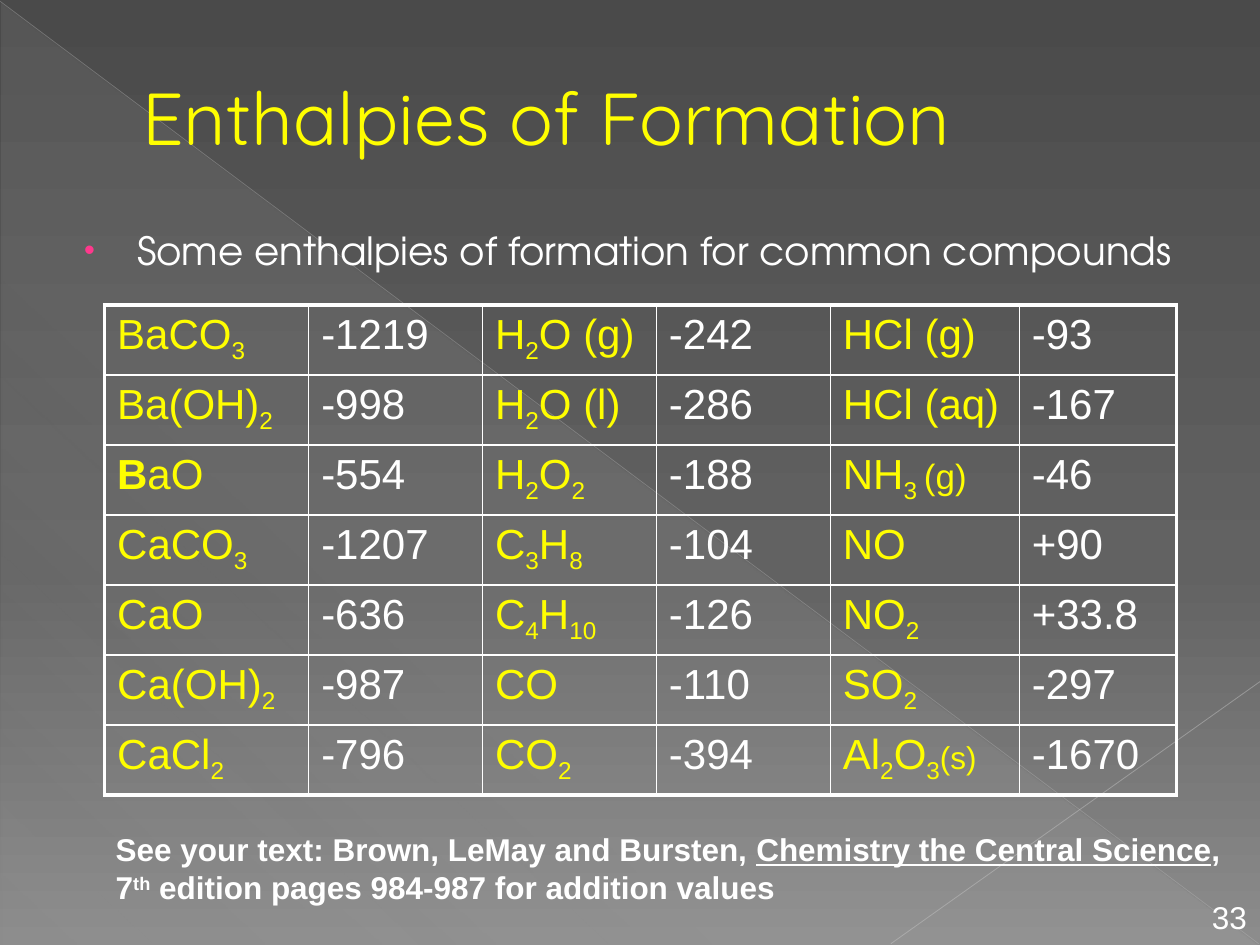
"""Builds the slide listing enthalpies of formation for common compounds."""
import itertools

import pptx
import pptx.dml.color
import pptx.enum.shapes
import pptx.enum.text
import pptx.oxml
import pptx.oxml.ns
import pptx.util

RGB = pptx.dml.color.RGBColor
Pt = pptx.util.Pt
qn = pptx.oxml.ns.qn
NS = pptx.oxml.ns.nsdecls("a")

WIDTH, HEIGHT = pptx.util.Inches(10), pptx.util.Inches(7.5)
YELLOW = RGB(0xFF, 0xFE, 0x00)
WHITE = RGB(0xFF, 0xFF, 0xFF)
PINK = RGB(0xFF, 0x38, 0x8C)
DARK = RGB(0x4A, 0x4A, 0x4A)
MIDDLE = RGB(0x62, 0x62, 0x62)
LIGHT = RGB(0x8C, 0x8C, 0x8C)
VEIL = RGB(0xD2, 0xD2, 0xD2)
LONG_LINE = RGB(0xBF, 0xBF, 0xBF)
SHORT_LINE = RGB(0xC6, 0xC6, 0xC6)

COLUMNS = (16.2, 13.8, 13.8, 13.8, 15, 12.5)
ROW_HEIGHT = 7.05
ROWS = (
    ("BaCO3", "-1219", "H2O (g)", "-242", "HCl (g)", "-93"),
    ("Ba(OH)2", "-998", "H2O (l)", "-286", "HCl (aq)", "-167"),
    ("BaO", "-554", "H2O2", "-188", "NH3 (g)", "-46"),
    ("CaCO3", "-1207", "C3H8", "-104", "NO", "+90"),
    ("CaO", "-636", "C4H10", "-126", "NO2", "+33.8"),
    ("Ca(OH)2", "-987", "CO", "-110", "SO2", "-297"),
    ("CaCl2", "-796", "CO2", "-394", "Al2O3(s)", "-1670"),
)
SUB = {"baseline": -25}
SPECIAL_RUNS = {
    "BaO": [("B", {"bold": True}), ("aO", {})],
    "NH3 (g)": [("NH", {}), ("3 ", SUB), ("(g)", {"size": 20})],
    "Al2O3(s)": [("Al", {}), ("2", SUB), ("O", {}), ("3", SUB), ("(s)", {"size": 18})],
}


def across(percent):
    """Return a share of the slide's width."""
    return round(WIDTH * percent / 100)


def down(percent):
    """Return a share of the slide's height."""
    return round(HEIGHT * percent / 100)


def place(x, y, w, h):
    """Return left, top, width and height from percentages of the slide."""
    return across(x), down(y), across(w), down(h)


def set_gradient(fill, root, stops, angle):
    """Give a fill gradient stops of position, colour and opacity."""
    fill.gradient()
    grad = root.find(".//" + qn("a:gradFill"))
    stop_list = grad.find(qn("a:gsLst"))
    for gs in list(stop_list):
        stop_list.remove(gs)
    for position, color, opacity in stops:
        stop_list.append(pptx.oxml.parse_xml(
            f'<a:gs {NS} pos="{position * 1000}"><a:srgbClr val="{color}">'
            f'<a:alpha val="{opacity * 1000}"/></a:srgbClr></a:gs>'))
    grad.find(qn("a:lin")).set("ang", str(angle * 60000))


def add_veil(s):
    """Add the faint triangle behind the content."""
    kind = pptx.enum.shapes.MSO_SHAPE.RIGHT_TRIANGLE
    sp = s.shapes.add_shape(kind, *place(0.1, 0.27, 99.8, 99.73))
    sp.shadow.inherit = False
    sp.line.fill.background()
    set_gradient(sp.fill, sp._element,
                 ((0, VEIL, 10), (70, VEIL, 8), (100, VEIL, 1)), 133)


def add_line(s, start, end, color, width, opacity):
    """Add a translucent straight line."""
    kind = pptx.enum.shapes.MSO_CONNECTOR.STRAIGHT
    line = s.shapes.add_connector(kind, across(start[0]), down(start[1]),
                                  across(end[0]), down(end[1]))
    line.line.color.rgb = color
    line.line.width = Pt(width)
    clr = line._element.spPr.find(".//" + qn("a:srgbClr"))
    clr.append(pptx.oxml.parse_xml(f'<a:alpha {NS} val="{opacity * 1000}"/>'))
    line._element.spPr.append(pptx.oxml.parse_xml(f"<a:effectLst {NS}/>"))


def add_run(p, text, size, color, font="Arial", bold=None, underline=None, baseline=0):
    """Add one formatted run to a paragraph."""
    r = p.add_run()
    r.text = text
    r.font.size = Pt(size)
    r.font.name = font
    r.font.color.rgb = color
    r.font.bold = bold
    r.font.underline = underline
    if baseline:
        r._r.get_or_add_rPr().set("baseline", str(baseline * 1000))


def add_text(s, box, wrap=True):
    """Add a text box and return its text frame."""
    tf = s.shapes.add_textbox(*box).text_frame
    tf.word_wrap = wrap
    return tf


def set_indent(p, left, hanging=0):
    """Set the left margin and hanging indent as shares of the width."""
    pPr = p._p.get_or_add_pPr()
    pPr.set("marL", str(across(left)))
    pPr.set("indent", str(-across(hanging)))


def add_bullet(p, color):
    """Give a paragraph a small coloured bullet."""
    pPr = p._p.get_or_add_pPr()
    for xml in (f'<a:buClr {NS}><a:srgbClr val="{color}"/></a:buClr>',
                f'<a:buSzPct {NS} val="80000"/>',
                f'<a:buFont {NS} typeface="Arial"/>',
                f'<a:buChar {NS} char="•"/>'):
        pPr.append(pptx.oxml.parse_xml(xml))


def formula_runs(formula):
    """Split a formula into runs with its digits as subscripts."""
    if formula in SPECIAL_RUNS:
        return SPECIAL_RUNS[formula]
    return [("".join(part), SUB if digits else {})
            for digits, part in itertools.groupby(formula, str.isdigit)]


def set_borders(cell, outer):
    """Draw white cell borders, thicker on the named outer sides."""
    tcPr = cell._tc.get_or_add_tcPr()
    for side in "LRTB":
        width = Pt(2.25 if side in outer else 1)
        tcPr.append(pptx.oxml.parse_xml(
            f'<a:ln{side} {NS} w="{width}"><a:solidFill>'
            f'<a:srgbClr val="{WHITE}"/></a:solidFill></a:ln{side}>'))


def add_enthalpy_table(s):
    """Add the table of compounds and their enthalpies."""
    rows, cols = len(ROWS), len(COLUMNS)
    box = place(8.3, 32.27, sum(COLUMNS), rows * ROW_HEIGHT)
    table = s.shapes.add_table(rows, cols, *box).table
    table.first_row = table.horz_banding = False
    for column, width in zip(table.columns, COLUMNS):
        column.width = across(width)
    for i, row in enumerate(ROWS):
        table.rows[i].height = down(ROW_HEIGHT)
        for j, value in enumerate(row):
            cell = table.cell(i, j)
            edges = {"T": i == 0, "B": i == rows - 1, "L": j == 0, "R": j == cols - 1}
            set_borders(cell, [side for side in edges if edges[side]])
            cell.fill.background()
            p = cell.text_frame.paragraphs[0]
            p.space_before = Pt(4.8)
            is_formula = j % 2 == 0
            runs = formula_runs(value) if is_formula else [(value, {})]
            for text, style in runs:
                add_run(p, text, **{"size": 24, "color": YELLOW if is_formula else WHITE,
                                    **style})


def add_heading(s):
    """Add the title and the bulleted introduction."""
    tf = add_text(s, place(5, 4, 90, 16.67))
    tf.vertical_anchor = pptx.enum.text.MSO_ANCHOR.MIDDLE
    p = tf.paragraphs[0]
    set_indent(p, 5.3)
    add_run(p, "Enthalpies of Formation", 42, YELLOW, "Quicksand")

    p = add_text(s, place(5, 23.33, 91.7, 10)).paragraphs[0]
    set_indent(p, 4.9, 4.2)
    p.space_before = Pt(4.4)
    add_bullet(p, PINK)
    add_run(p, "Some enthalpies of formation for common compounds", 22.2, WHITE,
            "TeX Gyre Adventor")


def add_footer(s):
    """Add the page number and the reference."""
    tf = add_text(s, place(95.2, 94.4, 4.8, 5.33), wrap=False)
    add_run(tf.paragraphs[0], "33", 18, WHITE)

    tf = add_text(s, place(8.2, 87.2, 90.3, 9.33), wrap=False)
    lines = (
        (("See your text: Brown, LeMay and Bursten, ", {}),
         ("Chemistry the Central Science", {"underline": True}), (",", {})),
        (("7", {}), ("th", {"baseline": 30}),
         (" edition pages 984-987 for addition values", {})),
    )
    for p, runs in zip((tf.paragraphs[0], tf.add_paragraph()), lines):
        for text, style in runs:
            add_run(p, text, 18, WHITE, bold=True, **style)


def main():
    """Build and save the slide."""
    prs = pptx.Presentation()
    prs.slide_width, prs.slide_height = WIDTH, HEIGHT
    s = prs.slides.add_slide(prs.slide_layouts[6])
    set_gradient(s.background.fill, s._element,
                 ((0, DARK, 100), (60, MIDDLE, 100), (100, LIGHT, 100)), 90)
    add_veil(s)
    add_line(s, (0, 0.13), (99.9, 99.87), LONG_LINE, 0.39, 35)
    add_line(s, (100, 72.13), (70.7, 99.87), SHORT_LINE, 0.47, 45)
    add_heading(s)
    add_enthalpy_table(s)
    add_footer(s)
    prs.save("out.pptx")


if __name__ == "__main__":
    main()
